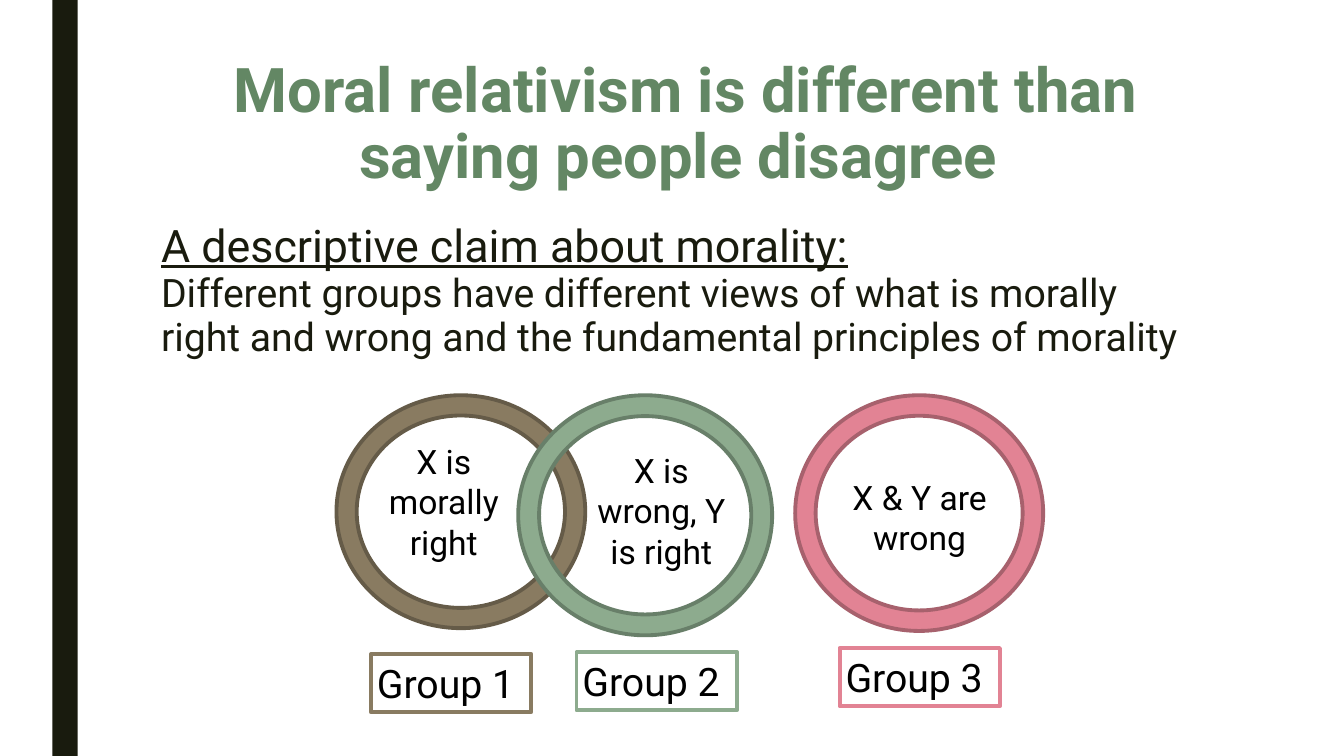
"""Build a slide that sets moral relativism apart from mere disagreement."""
from dataclasses import dataclass

from pptx import Presentation
from pptx.dml.color import RGBColor
from pptx.dml.fill import FillFormat
from pptx.enum.shapes import MSO_SHAPE
from pptx.enum.text import MSO_ANCHOR, PP_ALIGN
from pptx.shapes.autoshape import Shape
from pptx.util import Cm, Pt

FONT_NAME = "Roboto"
INK = "191B0E"
BLACK = "000000"
WHITE = "FFFFFF"
TITLE_GREEN = "638764"
OUTLINE_WIDTH = Pt(2.75)
RING_TOP = 9.96
RING_THICKNESS = 0.087
LABEL_SIZE = (4.04, 1.47)
TIGHT_MARGINS = {
    f"margin_{side}": Cm(0.15) for side in ("left", "top", "right", "bottom")
}
SMALL_FRAME = {
    "word_wrap": True, "vertical_anchor": MSO_ANCHOR.MIDDLE, **TIGHT_MARGINS,
}


@dataclass(frozen=True)
class Area:
    """Position and size in centimetres."""
    left: float
    top: float
    width: float
    height: float

    def lengths(self) -> tuple[Cm, Cm, Cm, Cm]:
        """Return the four lengths in drawing order."""
        return Cm(self.left), Cm(self.top), Cm(self.width), Cm(self.height)


@dataclass(frozen=True)
class Span:
    """Wording with its own font formatting."""
    text: str
    size: int
    color: str = BLACK
    bold: bool = False
    underline: bool = False


@dataclass(frozen=True)
class Group:
    """A group of people, its moral view and its label."""
    name: str
    view: str
    color: str
    edge: str
    ring: Area
    view_area: Area
    label_left: float
    label_top: float


GROUPS = (
    Group("Group 1", "X is morally right", "897B61", "655B48",
          Area(8.48, RING_TOP, 6.27, 5.87), Area(9.09, 10.64, 4.19, 3.99),
          9.35, 16.48),
    Group("Group 2", "X is wrong, Y is right", "8DAB8E", "687F69",
          Area(13.06, RING_TOP, 6.4, 6.05), Area(14.53, 10.82, 4.27, 4.09),
          14.53, 16.43),
    Group("Group 3", "X & Y are wrong", "E28394", "A7616D",
          Area(20.04, RING_TOP, 6.25, 5.94), Area(20.37, 11.63, 5.61, 2.79),
          21.16, 16.33),
)


def set_all(target: object, values: dict) -> None:
    """Set every named attribute on the target."""
    for name, value in values.items():
        setattr(target, name, value)


def paint(fill: FillFormat, color: str) -> None:
    """Fill with a solid colour given as a hex string."""
    fill.solid()
    fill.fore_color.rgb = RGBColor.from_string(color)


def add_figure(shapes, kind: MSO_SHAPE, area: Area, color: str,
               edge: str = "") -> Shape:
    """Draw a flat preset shape, outlined if an edge colour is given."""
    figure = shapes.add_shape(kind, *area.lengths())
    figure.shadow.inherit = False
    paint(figure.fill, color)
    if edge:
        paint(figure.line.fill, edge)
        figure.line.width = OUTLINE_WIDTH
    else:
        figure.line.fill.background()
    return figure


def write(box: Shape, spans: list[Span], frame_format: dict,
          para_format: dict) -> None:
    """Write one paragraph whose spans are parted by line breaks."""
    set_all(box.text_frame, frame_format)
    para = box.text_frame.paragraphs[0]
    set_all(para, para_format)
    for index, span in enumerate(spans):
        if index:
            para.add_line_break()
        run = para.add_run()
        run.text = span.text
        set_all(run.font, {
            "name": FONT_NAME, "size": Pt(span.size),
            "bold": span.bold, "underline": span.underline,
        })
        paint(run.font.fill, span.color)


def add_group(page, group: Group) -> None:
    """Draw a ring around the group's view, with a label below."""
    circle = page.shapes.add_group_shape().shapes
    ring = add_figure(circle, MSO_SHAPE.DONUT, group.ring, group.color,
                      group.edge)
    ring.adjustments[0] = RING_THICKNESS
    view = circle.add_textbox(*group.view_area.lengths())
    write(view, [Span(group.view, 24)], SMALL_FRAME,
          {"alignment": PP_ALIGN.CENTER})

    label_area = Area(group.label_left, group.label_top, *LABEL_SIZE)
    label = add_figure(page.shapes, MSO_SHAPE.RECTANGLE, label_area, WHITE,
                       group.color)
    write(label, [Span(group.name, 28)], SMALL_FRAME,
          {"alignment": PP_ALIGN.LEFT})


def main() -> None:
    """Build and save the deck."""
    deck = Presentation()
    set_all(deck, {"slide_width": Cm(33.87), "slide_height": Cm(19.05)})
    page = deck.slides.add_slide(deck.slide_layouts[6])

    add_figure(page.shapes, MSO_SHAPE.RECTANGLE, Area(1.32, 0, 0.64, 19.05),
               INK)

    title = page.shapes.add_textbox(*Area(3.96, 1.55, 26.67, 3.25).lengths())
    write(title,
          [Span("Moral relativism is different than saying people disagree ",
                44, TITLE_GREEN, bold=True)],
          {"word_wrap": True, "vertical_anchor": MSO_ANCHOR.MIDDLE},
          {"alignment": PP_ALIGN.CENTER, "line_spacing": 0.89})

    body = page.shapes.add_textbox(*Area(3.81, 5.46, 26.67, 10.85).lengths())
    write(body,
          [Span("A descriptive claim about morality:", 32, INK,
                underline=True),
           Span("Different groups have different views of what is morally "
                "right and wrong and the fundamental principles of morality",
                28, INK)],
          {"word_wrap": True, "vertical_anchor": MSO_ANCHOR.TOP},
          {"line_spacing": 0.94, "space_before": Pt(10),
           "space_after": Pt(2)})

    for group in GROUPS:
        add_group(page, group)

    deck.save("out.pptx")


if __name__ == "__main__":
    main()
